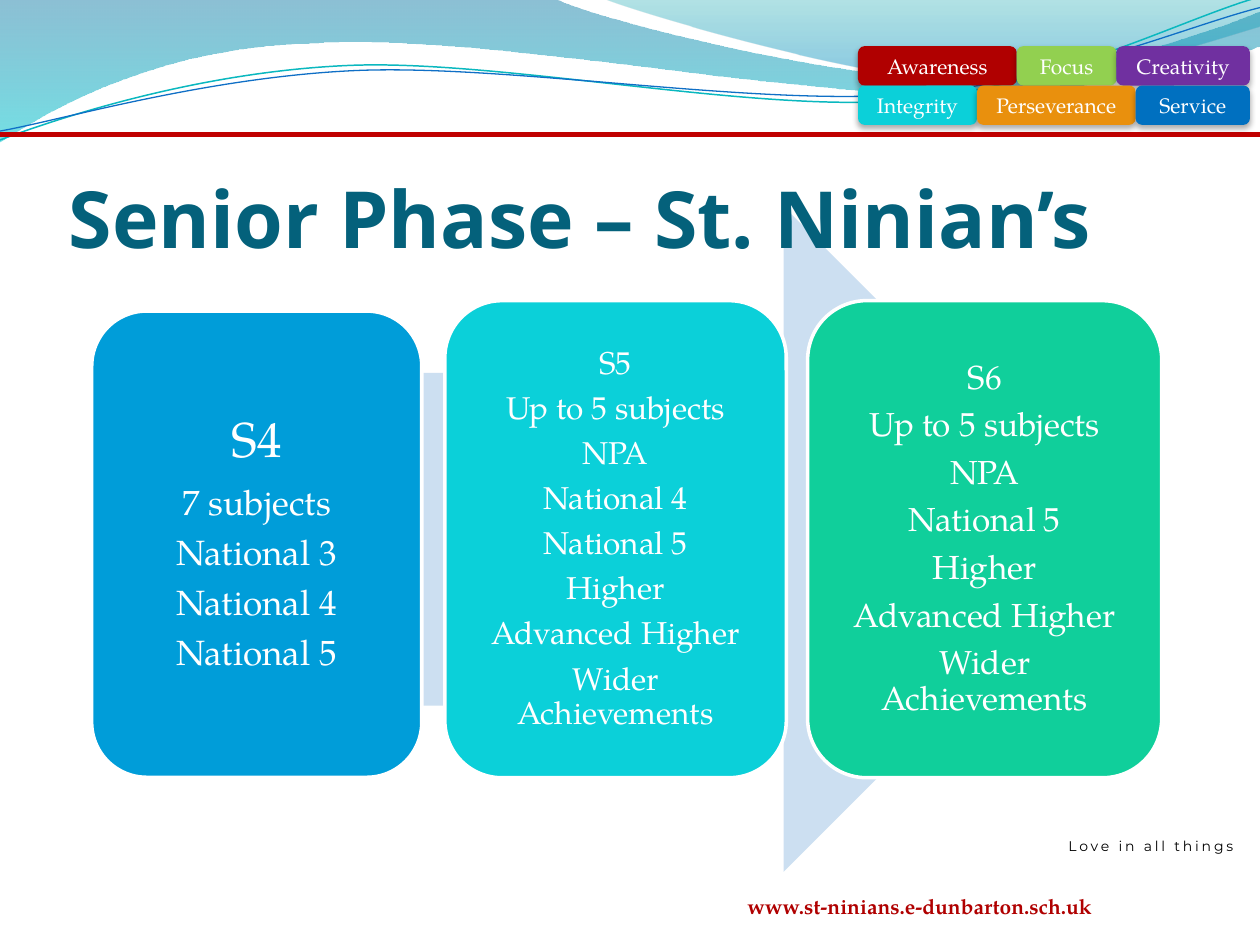
import math

from lxml import etree
from pptx import Presentation
from pptx import util as u
from pptx.dml.color import RGBColor
from pptx.enum import shapes, text
from pptx.oxml.ns import qn

Pt = u.Pt
COLORS = {
    "white": "FFFFFF", "black": "000000", "title": "04617B",
    "crimson": "B00000", "rule": "C00000",
    "green": "92D050", "purple": "7030A0", "cyan": "0BD0D9",
    "orange": "E9900D", "blue": "0070C0", "sky": "009DD9",
    "mint": "10CF9B", "arrow": "CCDFF1", "teal_line": "0AB8BF",
    "blue_line": "0F6FC6", "deep_blue": "0074A1", "aqua": "00C6CF",
    "deep_teal": "00A1A9", "ocean": "008BBF",
}
SERIF = "TeX Gyre Pagella"
ALIGN = text.PP_ALIGN
ANCHOR = text.MSO_ANCHOR
SWIRL_ANGLE = 357.3

WAVES = [
    ((-0.7, -0.7, 721.4, 82.1), (0, 0),
     [(317, -0.7), (343, 12, 478, 45, 546, 45), (614, 45, 690, 19, 720, 6.5),
      (720.7, 26), (708, 32, 626, 55, 537, 54), (448, 54, 275, 20, 185, 24.5),
      (93, 26, 33, 60, -0.7, 81.4)],
     [(0, "deep_blue", 45), (100, "aqua", 55)]),
    ((345, -0.7, 375, 50.4), (345, -0.7),
     [(366, 8, 491, 44.6, 554, 46.8), (616, 49.7, 692, 23, 720, 15), (720, 0)],
     [(0, "deep_teal", 30), (80, "ocean", 45)]),
]
SWIRLS = [
    ((-1.4, 15.8, 721.4, 51.1), (0, 80),
     [(34.6, 67, 113.8, 41, 199.4, 37.4), (284.4, 33.8, 427, 64, 513.4, 57.6),
      (600, 51, 675.4, 10.8, 718.6, -1.4)], "teal_line", 0.85),
    ((-1.4, 21.6, 722.2, 41.8), (0, 74.9),
     [(33.8, 69, 118, 44, 203.8, 40.3), (290, 36.7, 430, 60.5, 516.2, 54),
      (602, 48.2, 677.5, 15, 720, 4.3)], "blue_line", 0.75),
]
VALUES = [
    [("Awareness", 90.7, "crimson"), ("Focus", 57, "green"), ("Creativity", 76.3, "purple")],
    [("Integrity", 68, "cyan"), ("Perseverance", 90.7, "orange"), ("Service", 65.3, "blue")],
]
STAGES = [
    ((52.4, 177.8, 188.6, 266.4), "sky", 8.6, 28, 20,
     ["S4", "7 subjects", "National 3", "National 4", "National 5"]),
    ((254.2, 171.8, 195.1, 272.6), "cyan", 6.5, 18, 18,
     ["S5", "Up to 5 subjects", "NPA", "National 4", "National 5", "Higher",
      "Advanced Higher", "Wider Achievements"]),
    ((461.5, 171.8, 202.3, 272.6), "mint", 5.8, 19, 19,
     ["S6", "Up to 5 subjects", "NPA", "National 5", "Higher",
      "Advanced Higher", "Wider Achievements"]),
]


def rgb(name):
    return RGBColor.from_string(COLORS[name])


def write(paragraph, content, size=12, font=SERIF, color="white", bold=False,
          align=ALIGN.CENTER, line_spacing=None, after_percent=None, tracking=None):
    run = paragraph.add_run()
    run.text = content
    paragraph.alignment = align
    if line_spacing:
        paragraph.line_spacing = line_spacing
    if after_percent:
        paragraph.space_after = Pt(0)
        after = paragraph._p.pPr.find(qn("a:spcAft"))
        after.remove(after[0])
        etree.SubElement(after, qn("a:spcPct"), val=str(after_percent * 1000))
    run.font.size = Pt(size)
    run.font.name = font
    run.font.bold = bold
    run.font.color.rgb = rgb(color)
    if tracking:
        run._r.get_or_add_rPr().set("spc", str(int(tracking * 100)))


def set_frame(frame, insets=(7.2, 3.6, 7.2, 3.6), anchor=ANCHOR.MIDDLE, wrap=True):
    frame.word_wrap = wrap
    frame.auto_size = text.MSO_AUTO_SIZE.NONE
    frame.vertical_anchor = anchor
    (frame.margin_left, frame.margin_top,
     frame.margin_right, frame.margin_bottom) = map(Pt, insets)


def add_alpha_color(parent, name, percent):
    color = etree.SubElement(parent, qn("a:srgbClr"), val=COLORS[name])
    etree.SubElement(color, qn("a:alpha"), val=str(percent * 1000))


def to_local(point, box, angle):
    left, top, width, height = box
    x, y = point[0] - left - width / 2, point[1] - top - height / 2
    cosine, sine = math.cos(math.radians(angle)), math.sin(math.radians(angle))
    return (Pt(x * cosine + y * sine + width / 2),
            Pt(y * cosine - x * sine + height / 2))


class SlideBuilder:
    def __init__(self, slide):
        self.slide = slide
        self.shapes = slide.shapes

    def outline(self, box, start, steps, angle=0, close=False):
        builder = self.shapes.build_freeform(0, 0)
        builder.add_line_segments([(Pt(box[2]), Pt(box[3]))], close=False)
        shape = builder.convert_to_shape()
        shape.left, shape.top, shape.width, shape.height = map(Pt, box)
        shape.rotation = angle
        shape.shadow.inherit = False
        shape.fill.background()
        route = shape._element.spPr.find(".//" + qn("a:path"))
        for child in list(route):
            route.remove(child)
        for index, step in enumerate([start] + steps):
            tag = "moveTo" if index == 0 else "lnTo" if len(step) == 2 else "cubicBezTo"
            command = etree.SubElement(route, qn("a:" + tag))
            for point in zip(step[::2], step[1::2]):
                x, y = to_local(point, box, angle)
                etree.SubElement(command, qn("a:pt"), x=str(int(x)), y=str(int(y)))
        if close:
            etree.SubElement(route, qn("a:close"))
        return shape

    def wave(self, box, start, steps, stops):
        shape = self.outline(box, start, steps, close=True)
        shape.line.fill.background()
        properties = shape._element.spPr
        empty = properties.find(qn("a:noFill"))
        gradient = etree.Element(qn("a:gradFill"), rotWithShape="1")
        stop_list = etree.SubElement(gradient, qn("a:gsLst"))
        for position, color, percent in stops:
            stop = etree.SubElement(stop_list, qn("a:gs"), pos=str(position * 1000))
            add_alpha_color(stop, color, percent)
        etree.SubElement(gradient, qn("a:lin"), ang="5400000", scaled="0")
        properties.replace(empty, gradient)

    def swirl(self, box, start, steps, color, width):
        shape = self.outline(box, start, steps, SWIRL_ANGLE)
        shape.line.color.rgb = rgb(color)
        shape.line.width = Pt(width)

    def rule(self, y, color, width):
        connector = self.shapes.add_connector(
            shapes.MSO_CONNECTOR.STRAIGHT, Pt(0), Pt(y), Pt(720), Pt(y))
        connector.line.color.rgb = rgb(color)
        connector.line.width = Pt(width)
        etree.SubElement(connector._element.spPr, qn("a:effectLst"))

    def block(self, kind, box, fill, border=None):
        shape = self.shapes.add_shape(kind, *map(Pt, box))
        shape.shadow.inherit = False
        shape.fill.solid()
        shape.fill.fore_color.rgb = rgb(fill)
        if border:
            shape.line.color.rgb = rgb(border)
            shape.line.width = Pt(2)
        else:
            shape.line.fill.background()
        return shape

    def badge(self, box, label, fill):
        shape = self.block(shapes.MSO_SHAPE.ROUNDED_RECTANGLE, box, fill)
        effects = shape._element.spPr.find(qn("a:effectLst"))
        shadow = etree.SubElement(effects, qn("a:outerShdw"), blurRad=str(Pt(3.5)),
                                  dist=str(Pt(2.2)), dir="5400000", rotWithShape="0")
        add_alpha_color(shadow, "black", 32)
        set_frame(shape.text_frame)
        write(shape.text_frame.paragraphs[0], label)

    def card(self, box, fill, inset, heading_size, size, lines):
        shape = self.block(shapes.MSO_SHAPE.ROUNDED_RECTANGLE, box, fill, "white")
        frame = shape.text_frame
        set_frame(frame, (inset,) * 4)
        for index, line in enumerate(lines):
            paragraph = frame.add_paragraph() if index else frame.paragraphs[0]
            write(paragraph, line, size=size if index else heading_size,
                  line_spacing=0.9, after_percent=35)

    def label(self, box, content, frame_format, **text_format):
        shape = self.shapes.add_textbox(*map(Pt, box))
        set_frame(shape.text_frame, **frame_format)
        write(shape.text_frame.paragraphs[0], content, **text_format)

    def title(self, box, content):
        shape = self.shapes.title
        shape.left, shape.top, shape.width, shape.height = map(Pt, box)
        set_frame(shape.text_frame, (0, 3.6, 0, 0), ANCHOR.BOTTOM)
        write(shape.text_frame.paragraphs[0], content, size=45, font="Noto Sans",
              color="title", bold=True, align=ALIGN.LEFT)
        self.shapes._spTree.append(shape._element)


def main():
    presentation = Presentation()
    presentation.slide_width, presentation.slide_height = Pt(720), Pt(540)
    builder = SlideBuilder(presentation.slides.add_slide(presentation.slide_layouts[5]))
    for wave in WAVES:
        builder.wave(*wave)
    for swirl in SWIRLS:
        builder.swirl(*swirl)
    builder.rule(77, "rule", 3)
    for row, badges in enumerate(VALUES):
        left = 490.3
        for label, width, fill in badges:
            builder.badge((left, 26.4 + row * 22.5, width, 22.5), label, fill)
            left += width
    builder.label((360, 496, 264.2, 28.8), "www.st-ninians.e-dunbarton.sch.uk",
                  {"insets": (0, 0, 0, 0), "anchor": ANCHOR.BOTTOM},
                  color="crimson", bold=True, align=ALIGN.RIGHT)
    builder.label((629.3, 475.2, 56.9, 53.3), "Love in all things",
                  {"anchor": ANCHOR.TOP, "wrap": False},
                  size=8, font="Montserrat", color="black", tracking=1.6)
    builder.block(shapes.MSO_SHAPE.RIGHT_ARROW, (79.2, 118, 558.7, 380.2), "arrow")
    for stage in STAGES:
        builder.card(*stage)
    builder.title((39.2, 72.4, 648, 78.5), "Senior Phase – St. Ninian’s")
    presentation.save("out.pptx")


if __name__ == "__main__":
    main()
